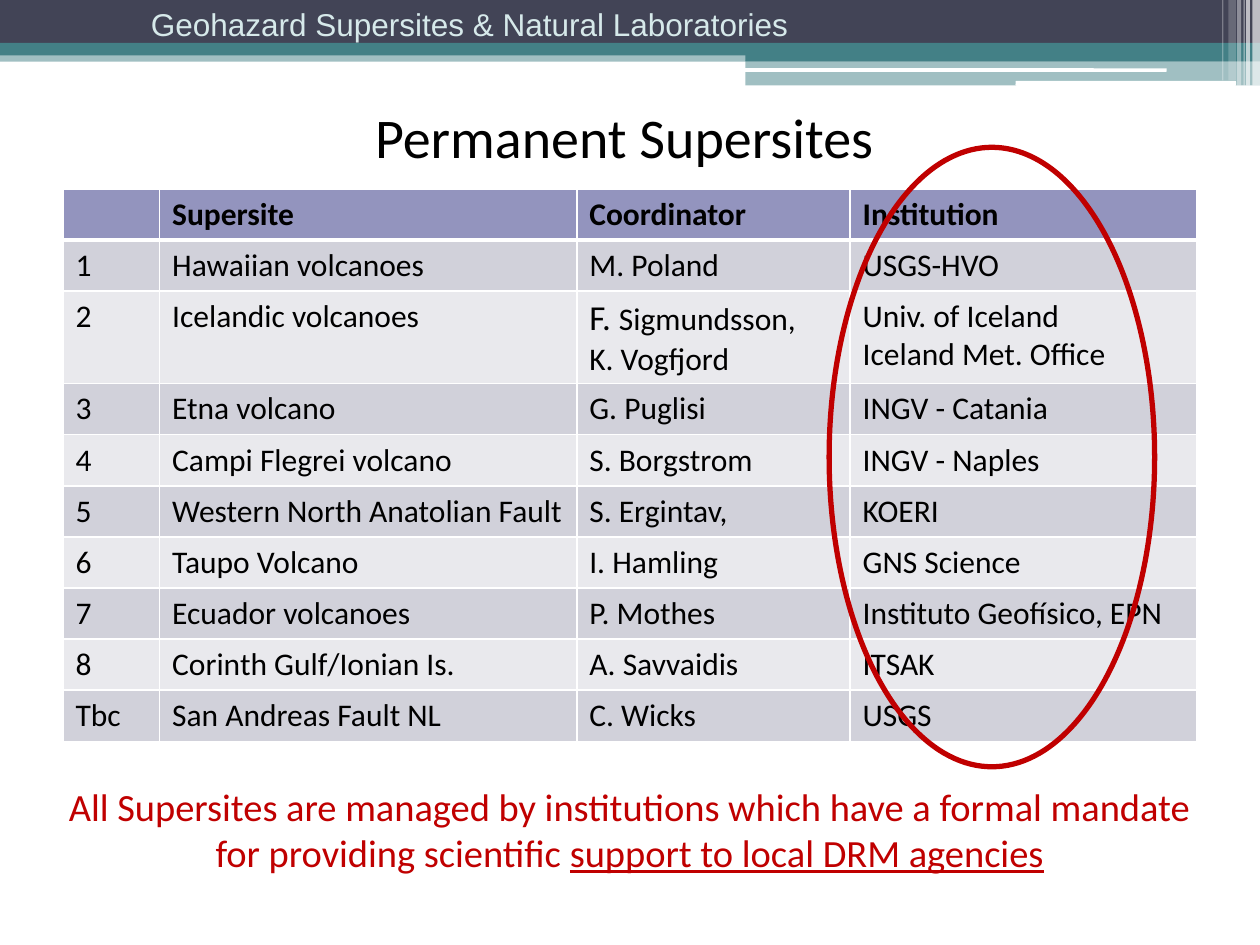
import pptx
import pptx.util
import pptx.dml.color
import pptx.enum.shapes
import pptx.enum.text
import pptx.oxml
import pptx.oxml.ns
from dataclasses import dataclass

Pt = pptx.util.Pt
RGB = pptx.dml.color.RGBColor.from_string
SHAPE = pptx.enum.shapes.MSO_SHAPE
ALIGN = pptx.enum.text.PP_ALIGN
ANCHOR = pptx.enum.text.MSO_ANCHOR
NAMESPACE = pptx.oxml.ns.nsdecls("a")


@dataclass(frozen=True)
class Theme:
    navy: str = "424456"
    teal: str = "438086"
    pale_teal: str = "D6E9EA"
    white: str = "FFFFFF"
    black: str = "000000"
    red: str = "C00000"
    header_row: str = "9394BE"
    odd_row: str = "D1D1DA"
    even_row: str = "E9E9ED"
    heading_font: str = "Arial"
    body_font: str = "Calibri"
    title_size: int = 32
    message_size: int = 22
    initial_size: int = 20
    text_size: int = 18


theme = Theme()


def add_span(para, text, size, color, font=theme.body_font, bold=False):
    span = para.add_run()
    span.text = text
    span.font.size = Pt(size)
    span.font.name = font
    span.font.bold = bold
    span.font.color.rgb = RGB(color)
    return span


def add_border(cell, side, width):
    cell.get_or_add_tcPr() if hasattr(cell, "get_or_add_tcPr") else None
    cell._tc.get_or_add_tcPr().append(pptx.oxml.parse_xml(
        f'<a:ln{side} {NAMESPACE} w="{Pt(width)}"><a:solidFill>'
        f'<a:srgbClr val="{theme.white}"/></a:solidFill></a:ln{side}>'))


deck = pptx.Presentation()
deck.slide_width, deck.slide_height = Pt(720), Pt(540)
page = deck.slides.add_slide(deck.slide_layouts[1])

# Banner: left, top, width, height, colour, opacity in percent, rounded
banner = [
    (0, 28.8, 720, 6.5, theme.teal, 50, False),
    (0, 0, 720, 24.5, theme.navy, 100, False),
    (0, 24.5, 720, 7.2, theme.teal, 100, False),
    (426, 28, 294, 7, theme.teal, 100, False),
    (426, 34.5, 294, 14.4, theme.teal, 50, False),
    (425.5, 39, 241.2, 2, theme.white, 100, True),
    (580.3, 46.2, 126, 2.8, theme.white, 100, True),
    (715.7, 0, 4.3, 49, theme.white, 65, False),
    (712.1, 0, 2.2, 49, theme.white, 65, False),
    (710.6, 0, 0.7, 49, theme.white, 60, False),
    (707, 0, 2.2, 49, theme.white, 40, False),
    (702, 0, 4.3, 46, theme.white, 20, False),
    (698.4, 0, 0.7, 46, theme.white, 30, False),
]
for left, top, width, height, color, opacity, rounded in banner:
    kind = SHAPE.ROUNDED_RECTANGLE if rounded else SHAPE.RECTANGLE
    bar = page.shapes.add_shape(kind, Pt(left), Pt(top), Pt(width), Pt(height))
    bar.shadow.inherit = False
    bar.line.fill.background()
    bar.fill.solid()
    bar.fill.fore_color.rgb = RGB(color)
    if opacity < 100:
        bar.fill._xPr.find(".//" + pptx.oxml.ns.qn("a:srgbClr")).append(
            pptx.oxml.parse_xml(f'<a:alpha {NAMESPACE} val="{opacity * 1000}"/>'))

box = page.shapes.add_textbox(Pt(79.2), Pt(-0.7), Pt(391), Pt(29))
box.text_frame.word_wrap = False
add_span(box.text_frame.paragraphs[0], "Geohazard Supersites & Natural Laboratories",
         theme.text_size, theme.pale_teal, theme.heading_font)

# Title and closing message
title, message = page.shapes.title, page.placeholders[1]
for box, left, top, width, height in [(title, 23.8, 41.8, 666, 72),
                                      (message, 23.8, 419.8, 672, 108)]:
    box.left, box.top, box.width, box.height = Pt(left), Pt(top), Pt(width), Pt(height)
    box.text_frame.auto_size = pptx.enum.text.MSO_AUTO_SIZE.NONE
    box.text_frame.vertical_anchor = ANCHOR.MIDDLE
    para = box.text_frame.paragraphs[0]
    para.alignment = ALIGN.CENTER
    para.space_before = Pt(0)

add_span(title.text_frame.paragraphs[0], "Permanent Supersites",
         theme.title_size, theme.black)

para = message.text_frame.paragraphs[0]
properties = para._p.get_or_add_pPr()
properties.set("marL", "0")
properties.set("indent", "0")
properties.append(pptx.oxml.parse_xml(f"<a:buNone {NAMESPACE}/>"))
add_span(para, "All Supersites are managed by institutions which have a formal mandate "
         "for providing scientific ", theme.message_size, theme.red)
add_span(para, "support to local DRM agencies",
         theme.message_size, theme.red).font.underline = True

# Table of supersites
rows = [
    ("", "Supersite", "Coordinator", "Institution"),
    ("1", "Hawaiian volcanoes", "M. Poland", "USGS-HVO"),
    ("2", "Icelandic volcanoes", "F. Sigmundsson,\nK. Vogfjord",
     "Univ. of Iceland\nIceland Met. Office"),
    ("3", "Etna volcano", "G. Puglisi", "INGV - Catania"),
    ("4", "Campi Flegrei volcano", "S. Borgstrom", "INGV - Naples"),
    ("5", "Western North Anatolian Fault", "S. Ergintav,", "KOERI"),
    ("6", "Taupo Volcano", "I. Hamling", "GNS Science"),
    ("7", "Ecuador volcanoes", "P. Mothes", "Instituto Geofísico, EPN"),
    ("8", "Corinth Gulf/Ionian Is.", "A. Savvaidis", "ITSAK"),
    ("Tbc", "San Andreas Fault NL", "C. Wicks", "USGS"),
]
large_initial = "F. "
column_widths = [55.2, 238.4, 156.2, 198.2]
row_height = 29.2
table = page.shapes.add_table(len(rows), len(column_widths), Pt(36), Pt(108),
                              Pt(648), Pt(row_height * len(rows))).table
for column, width in zip(table.columns, column_widths):
    column.width = Pt(width)

for row_index, texts in enumerate(rows):
    table.rows[row_index].height = Pt(row_height)
    is_header = row_index == 0
    fill = theme.header_row if is_header else (theme.even_row, theme.odd_row)[row_index % 2]
    for column_index, text in enumerate(texts):
        cell = table.cell(row_index, column_index)
        for side in "LRTB":
            below_header = (row_index, side) in [(0, "B"), (1, "T")]
            add_border(cell, side, 3 if below_header else 1)
        cell.fill.solid()
        cell.fill.fore_color.rgb = RGB(fill)
        for line_index, line in enumerate(text.split("\n") if text else []):
            frame = cell.text_frame
            para = frame.add_paragraph() if line_index else frame.paragraphs[0]
            if line.startswith(large_initial):
                add_span(para, large_initial, theme.initial_size, theme.black)
                line = line.removeprefix(large_initial)
            add_span(para, line, theme.text_size, theme.black, bold=is_header)

# Ring around the institutions
ring = page.shapes.add_shape(SHAPE.OVAL, Pt(473.8), Pt(84.2), Pt(186), Pt(354))
ring.shadow.inherit = False
ring.fill.background()
ring.line.color.rgb = RGB(theme.red)
ring.line.width = Pt(3)

deck.save("out.pptx")
